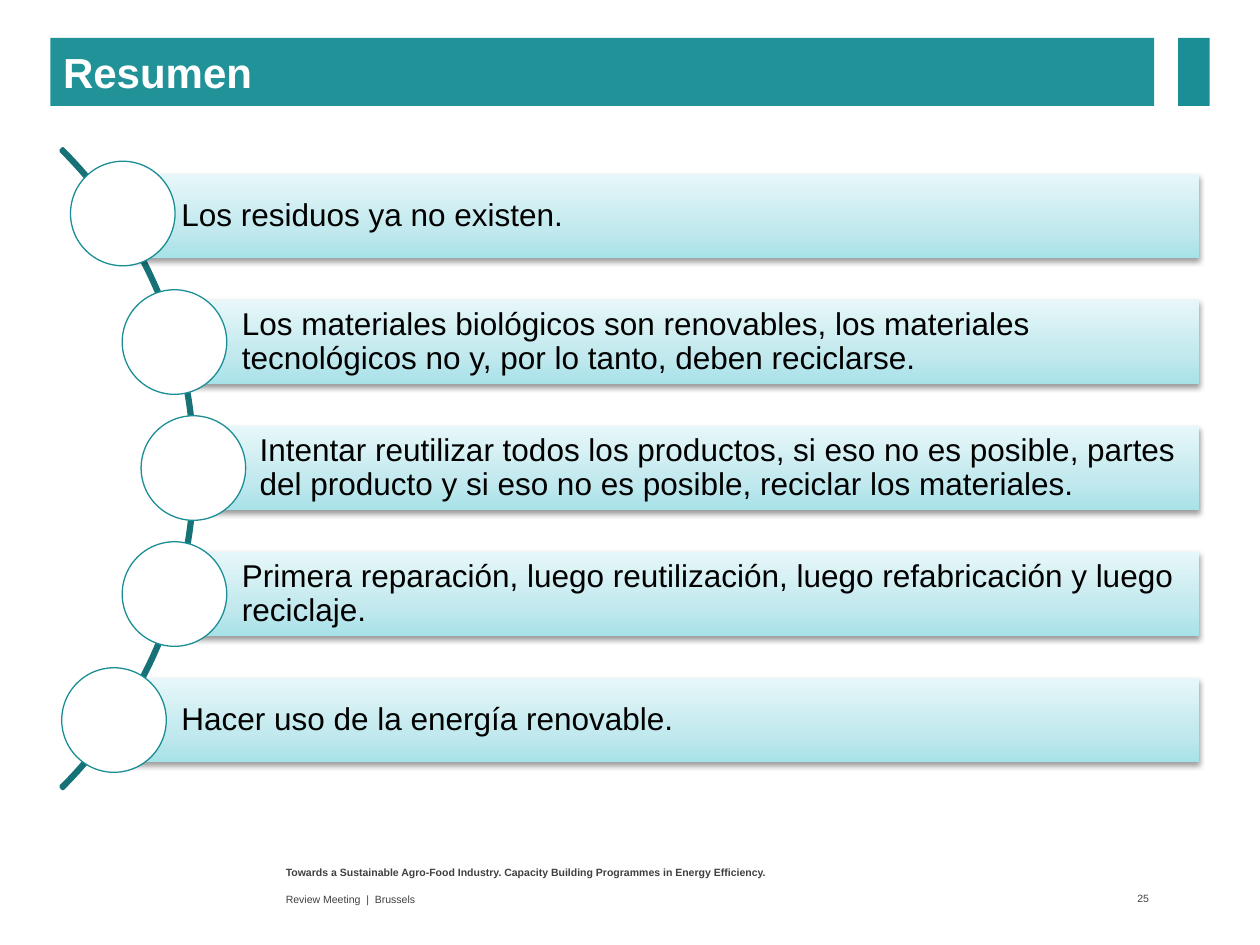
"""Build the summary slide: five conclusions along a curved arc."""
import copy
from dataclasses import dataclass

import lxml.etree
import pptx
import pptx.dml.color
import pptx.enum.shapes
import pptx.enum.text
import pptx.oxml.ns
import pptx.util

Inches = pptx.util.Inches
Pt = pptx.util.Pt
Shapes = pptx.enum.shapes.MSO_SHAPE
Anchor = pptx.enum.text.MSO_ANCHOR
Align = pptx.enum.text.PP_ALIGN
qn = pptx.oxml.ns.qn


@dataclass(frozen=True)
class Theme:
    """Colours and type sizes of the slide."""
    font: str = "Arial"
    title_fill: str = "209298"
    accent: str = "1B8E95"
    arc: str = "167277"
    white: str = "FFFFFF"
    black: str = "000000"
    footer: str = "404040"
    bar_stops: tuple = ((0, "A7E2E8"), (0.35, "C2E9EE"), (1, "E7F7F9"))
    title_size: int = 24
    body_size: int = 18
    footer_size: int = 6


@dataclass(frozen=True)
class Box:
    """Position and size in inches."""
    left: float
    top: float
    width: float
    height: float

    def lengths(self) -> tuple:
        """Return the four values as lengths."""
        return tuple(map(Inches, (self.left, self.top, self.width, self.height)))


@dataclass(frozen=True)
class Conclusion:
    """One bar with its circle."""
    text: str
    bar_left: float
    circle_left: float
    circle_top: float


@dataclass(frozen=True)
class Footer:
    """One line of footer text."""
    text: str
    box: Box
    anchor: Anchor = Anchor.MIDDLE
    align: Align = Align.LEFT
    bold: bool = False
    right_inset: float = 0.1


THEME = Theme()
BAR_RIGHT, BAR_TOP, BAR_HEIGHT, PITCH, CIRCLE = 9.52, 1.38, 0.67, 1.0, 0.83
TITLE_BOX = Box(0.4, 0.3, 8.76, 0.54)
ACCENT_BOX = Box(9.35, 0.3, 0.25, 0.54)
ARC_BOX = Box(-5.63, 0.13, 7.18, 7.18)
CONCLUSIONS = (
    Conclusion("Los residuos ya no existen.", 0.91, 0.56, 1.28),
    Conclusion("Los materiales biológicos son renovables, los materiales tecnológicos no y, "
               "por lo tanto, deben reciclarse.", 1.39, 0.97, 2.3),
    Conclusion("Intentar reutilizar todos los productos, si eso no es posible, partes del "
               "producto y si eso no es posible, reciclar los materiales.", 1.53, 1.12, 3.3),
    Conclusion("Primera reparación, luego reutilización, luego refabricación y luego "
               "reciclaje.", 1.39, 0.97, 4.3),
    Conclusion("Hacer uso de la energía renovable.", 0.91, 0.49, 5.3),
)
FOOTERS = (
    Footer("Towards a Sustainable Agro-Food Industry. Capacity Building Programmes in "
           "Energy Efficiency.", Box(2.17, 6.82, 5.5, 0.21), anchor=Anchor.TOP, bold=True),
    Footer("Review Meeting  |  Brussels", Box(2.17, 7.04, 5.5, 0.19)),
    Footer("25", Box(8.6, 7.03, 0.56, 0.2), align=Align.RIGHT, right_inset=0.04),
)


def rgb(value: str) -> pptx.dml.color.RGBColor:
    """Turn a hex string into a colour."""
    return pptx.dml.color.RGBColor.from_string(value)


def write(shape, text: str, size: int, color: str, bold: bool = False,
          align: Align = Align.LEFT, anchor: Anchor = Anchor.MIDDLE):
    """Write one formatted run and return its paragraph."""
    frame = shape.text_frame
    frame.word_wrap = True
    frame.auto_size = pptx.enum.text.MSO_AUTO_SIZE.NONE
    frame.vertical_anchor = anchor
    paragraph = frame.paragraphs[0]
    paragraph.alignment = align
    run = paragraph.add_run()
    run.text = text
    run.font.name = THEME.font
    run.font.size = Pt(size)
    run.font.bold = bold
    run.font.color.rgb = rgb(color)
    return paragraph


def add_shape(slide, kind: Shapes, box: Box, fill: str | None = None,
              line: str | None = None, line_width: float = 0.75):
    """Add a preset shape without a shadow."""
    shape = slide.shapes.add_shape(kind, *box.lengths())
    if fill:
        shape.fill.solid()
        shape.fill.fore_color.rgb = rgb(fill)
    else:
        shape.fill.background()
    if line:
        shape.line.color.rgb = rgb(line)
        shape.line.width = Pt(line_width)
    else:
        shape.line.fill.background()
    shape.shadow.inherit = False
    return shape


def fill_gradient(shape) -> None:
    """Fill a bar with the three-stop vertical gradient."""
    shape.fill.gradient()
    shape.fill.gradient_angle = 90
    stop_list = shape.element.spPr.find(".//" + qn("a:gsLst"))
    stop_list.insert(1, copy.deepcopy(stop_list[0]))
    for stop, (position, color) in zip(shape.fill.gradient_stops, THEME.bar_stops):
        stop.position = position
        stop.color.rgb = rgb(color)


def add_shadow(shape) -> None:
    """Give a bar its soft shadow below."""
    effects = shape.element.spPr.find(qn("a:effectLst"))
    shadow = lxml.etree.SubElement(
        effects, qn("a:outerShdw"), blurRad=str(Pt(3.1)), dist=str(Pt(1.6)),
        dir="5400000", rotWithShape="0")
    color = lxml.etree.SubElement(shadow, qn("a:srgbClr"), val=THEME.black)
    lxml.etree.SubElement(color, qn("a:alpha"), val="38000")


def add_conclusion(slide, conclusion: Conclusion, top: float) -> None:
    """Draw one bar with its text and circle."""
    bar = add_shape(slide, Shapes.RECTANGLE, Box(
        conclusion.bar_left, top, BAR_RIGHT - conclusion.bar_left, BAR_HEIGHT))
    fill_gradient(bar)
    add_shadow(bar)
    paragraph = write(bar, conclusion.text, THEME.body_size, THEME.black)
    paragraph.line_spacing = 0.9
    bar.text_frame.margin_left = Inches(0.53)
    bar.text_frame.margin_right = Inches(0.05)
    add_shape(slide, Shapes.OVAL, Box(
        conclusion.circle_left, conclusion.circle_top, CIRCLE, CIRCLE),
        THEME.white, THEME.accent)


def add_footer(slide, footer: Footer) -> None:
    """Draw one footer line."""
    shape = slide.shapes.add_textbox(*footer.box.lengths())
    write(shape, footer.text, THEME.footer_size, THEME.footer,
          footer.bold, footer.align, footer.anchor)
    shape.text_frame.margin_right = Inches(footer.right_inset)


def main() -> None:
    """Build and save the presentation."""
    presentation = pptx.Presentation()
    presentation.slide_width, presentation.slide_height = Inches(10), Inches(7.5)
    slide = presentation.slides.add_slide(presentation.slide_layouts[5])
    title = slide.shapes.title
    title.left, title.top, title.width, title.height = TITLE_BOX.lengths()
    title.fill.solid()
    title.fill.fore_color.rgb = rgb(THEME.title_fill)
    write(title, "Resumen", THEME.title_size, THEME.white, bold=True)
    add_shape(slide, Shapes.RECTANGLE, ACCENT_BOX, THEME.accent)
    arc = add_shape(slide, Shapes.BLOCK_ARC, ARC_BOX, line=THEME.arc, line_width=2)
    for index, value in enumerate((189, 27, 0.003)):
        arc.adjustments[index] = value
    for index, conclusion in enumerate(CONCLUSIONS):
        add_conclusion(slide, conclusion, BAR_TOP + index * PITCH)
    for footer in FOOTERS:
        add_footer(slide, footer)
    presentation.save("out.pptx")


if __name__ == "__main__":
    main()
